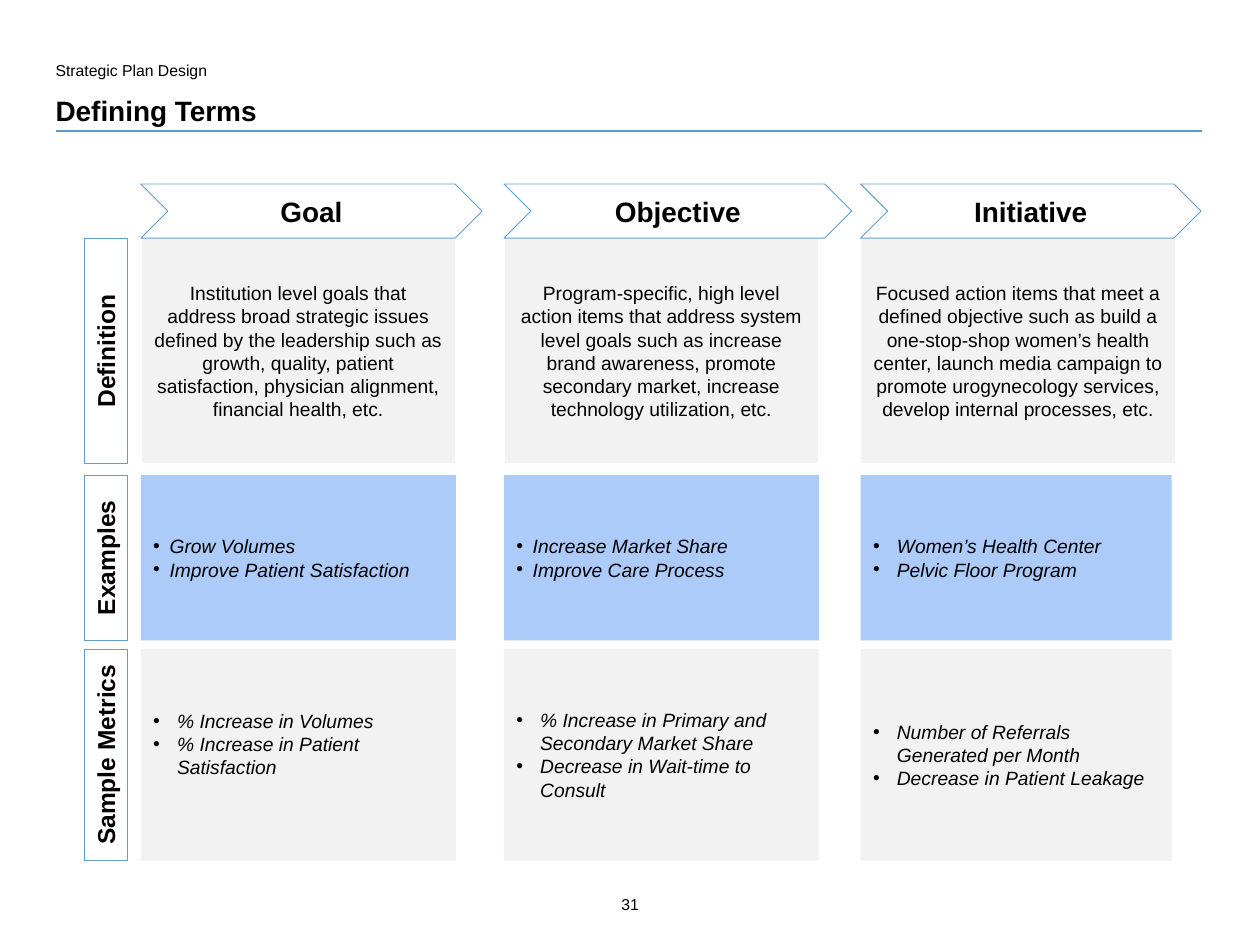
from lxml import etree
from pptx import Presentation
from pptx import util as u
from pptx.dml.color import RGBColor
from pptx.enum import shapes, text
from pptx.oxml.ns import qn

HUES = {"ink": "000000", "white": "FFFFFF", "gray": "F2F2F2",
        "sky": "ACCBF9", "edge": "629DD1", "rule": "5D9ACF"}
MID, TOP, LOW = (text.MSO_ANCHOR.MIDDLE, text.MSO_ANCHOR.TOP,
                 text.MSO_ANCHOR.BOTTOM)
LEFT, CENTER = text.PP_ALIGN.LEFT, text.PP_ALIGN.CENTER


class Deck:
    font = "Arial"

    def __init__(self, show):
        self.slide = show.slides.add_slide(show.slide_layouts[1])

    def hue(self, name):
        return RGBColor.from_string(HUES[name])

    def letter(self, shape, lines, size, pads, anchor=MID, align=CENTER,
               bold=False, slant=False, dent=0):
        frame = shape.text_frame
        frame.text = "\n".join(lines)
        frame.word_wrap = True
        frame.auto_size = text.MSO_AUTO_SIZE.NONE
        frame.vertical_anchor = anchor
        (frame.margin_left, frame.margin_top,
         frame.margin_right, frame.margin_bottom) = map(u.Cm, pads)
        for para in frame.paragraphs:
            para.alignment = align
            para.space_before = u.Pt(0)
            props = para._p.get_or_add_pPr()
            props.set("marL", str(int(u.Cm(dent))))
            props.set("indent", str(-int(u.Cm(dent))))
            if dent:
                face = etree.SubElement(props, qn("a:buFont"))
                face.set("typeface", self.font)
                etree.SubElement(props, qn("a:buChar")).set("char", "•")
            else:
                etree.SubElement(props, qn("a:buNone"))
            for run in para.runs:
                run.font.name = self.font
                run.font.size = u.Pt(size)
                run.font.bold = bold
                run.font.italic = slant
                run.font.color.rgb = self.hue("ink")

    def place(self, holder, box, words, size, pads, **style):
        holder.left, holder.top, holder.width, holder.height = map(u.Cm, box)
        self.letter(holder, [words], size, pads, align=LEFT, **style)

    def shape(self, kind, box, fill, edge=None, width=1):
        item = self.slide.shapes.add_shape(kind, *map(u.Cm, box))
        item.shadow.inherit = False
        item.fill.solid()
        item.fill.fore_color.rgb = self.hue(fill)
        if edge:
            item.line.color.rgb = self.hue(edge)
            item.line.width = u.Pt(width)
        else:
            item.line.fill.background()
        return item

    def cell(self, box, fill, lines, edge=None, dent=0, foot=0.25):
        item = self.shape(shapes.MSO_SHAPE.RECTANGLE, box, fill, edge)
        self.letter(item, lines, 11, (0.25, 0.25, 0.25, foot), dent=dent,
                    align=LEFT if dent else CENTER, slant=bool(dent))

    def arrow(self, box, words):
        item = self.shape(shapes.MSO_SHAPE.CHEVRON, box, "white", "edge", 0.5)
        self.letter(item, [words], 16, (0.36, 0.18, 0.36, 0.18), bold=True)

    def label(self, box, words):
        item = self.shape(shapes.MSO_SHAPE.RECTANGLE, box, "white", "edge", 0.25)
        self.letter(item, [words], 14, (0.13,) * 4, anchor=TOP, bold=True)
        item.element.txBody.bodyPr.set("vert", "vert270")

    def note(self, box, words):
        item = self.slide.shapes.add_textbox(*map(u.Cm, box))
        self.letter(item, [words], 9, (0.1,) * 4, anchor=TOP)

    def rule(self, x, y, end):
        item = self.slide.shapes.add_connector(
            shapes.MSO_CONNECTOR.STRAIGHT, u.Cm(x), u.Cm(y), u.Cm(end), u.Cm(y))
        item.line.color.rgb = self.hue("rule")
        item.line.width = u.Pt(0.75)
        etree.SubElement(item.element.spPr, qn("a:effectLst"))


ROWS = [("Definition", 4.8, 4.55), ("Examples", 9.58, 3.33),
        ("Sample Metrics", 13.08, 4.27)]
COLS = [
    {"head": "Goal", "x": 2.84, "arrow": 6.88, "wide": 6.35, "dent": 0.33,
     "foot": 0.7,
     "about": "Institution level goals that address broad strategic issues "
              "defined by the leadership such as growth, quality, patient "
              "satisfaction, physician alignment, financial health, etc.",
     "cases": ["Grow Volumes", "Improve Patient Satisfaction"],
     "marks": ["% Increase in Volumes", "% Increase in Patient Satisfaction"]},
    {"head": "Objective", "x": 10.16, "arrow": 7.01, "wide": 6.35, "dent": 0.33,
     "foot": 0.25,
     "about": "Program-specific, high level action items that address system "
              "level goals such as increase brand awareness, promote "
              "secondary market, increase technology utilization, etc.",
     "cases": ["Increase Market Share", "Improve Care Process"],
     "marks": ["% Increase in Primary and Secondary Market Share",
               "Decrease in Wait-time to Consult"]},
    {"head": "Initiative", "x": 17.35, "arrow": 6.86, "wide": 6.27, "dent": 0.48,
     "foot": 0.25,
     "about": "Focused action items that meet a defined objective such as "
              "build a one-stop-shop women’s health center, launch media "
              "campaign to promote urogynecology services, develop internal "
              "processes, etc.",
     "cases": ["Women’s Health Center", "Pelvic Floor Program"],
     "marks": ["Number of Referrals Generated per Month",
               "Decrease in Patient Leakage"]},
]


def main():
    show = Presentation()
    show.slide_width, show.slide_height = u.Cm(25.4), u.Cm(19.05)
    deck = Deck(show)
    title, body = deck.slide.placeholders
    deck.rule(1.12, 2.64, 24.23)
    deck.place(body, (1.12, 1.12, 7.34, 0.51), "Strategic Plan Design", 9,
               (0, 0.1, 0, 0.1), anchor=TOP)
    deck.place(title, (1.12, 1.88, 23.09, 0.69), "Defining Terms", 16,
               (0, 0, 0, 0), anchor=LOW, bold=True)

    (_, y1, h1), (_, y2, h2), (_, y3, h3) = ROWS
    for col in COLS:
        x, wide = col["x"], col["wide"]
        deck.cell((x, y1, 6.35, h1), "gray", [col["about"]], edge="white")
        deck.cell((x, y2, wide, h2), "sky", col["cases"], dent=col["dent"])
        deck.cell((x, y3, wide, h3), "gray", col["marks"], dent=0.48,
                  foot=col["foot"])
        deck.arrow((x, 3.71, col["arrow"], 1.09), col["head"])
    for name, y, high in ROWS:
        deck.label((1.7, y, 0.86, high), name)
    deck.note((11.84, 17.93, 1.73, 0.66), "31")
    show.save("out.pptx")


if __name__ == "__main__":
    main()
